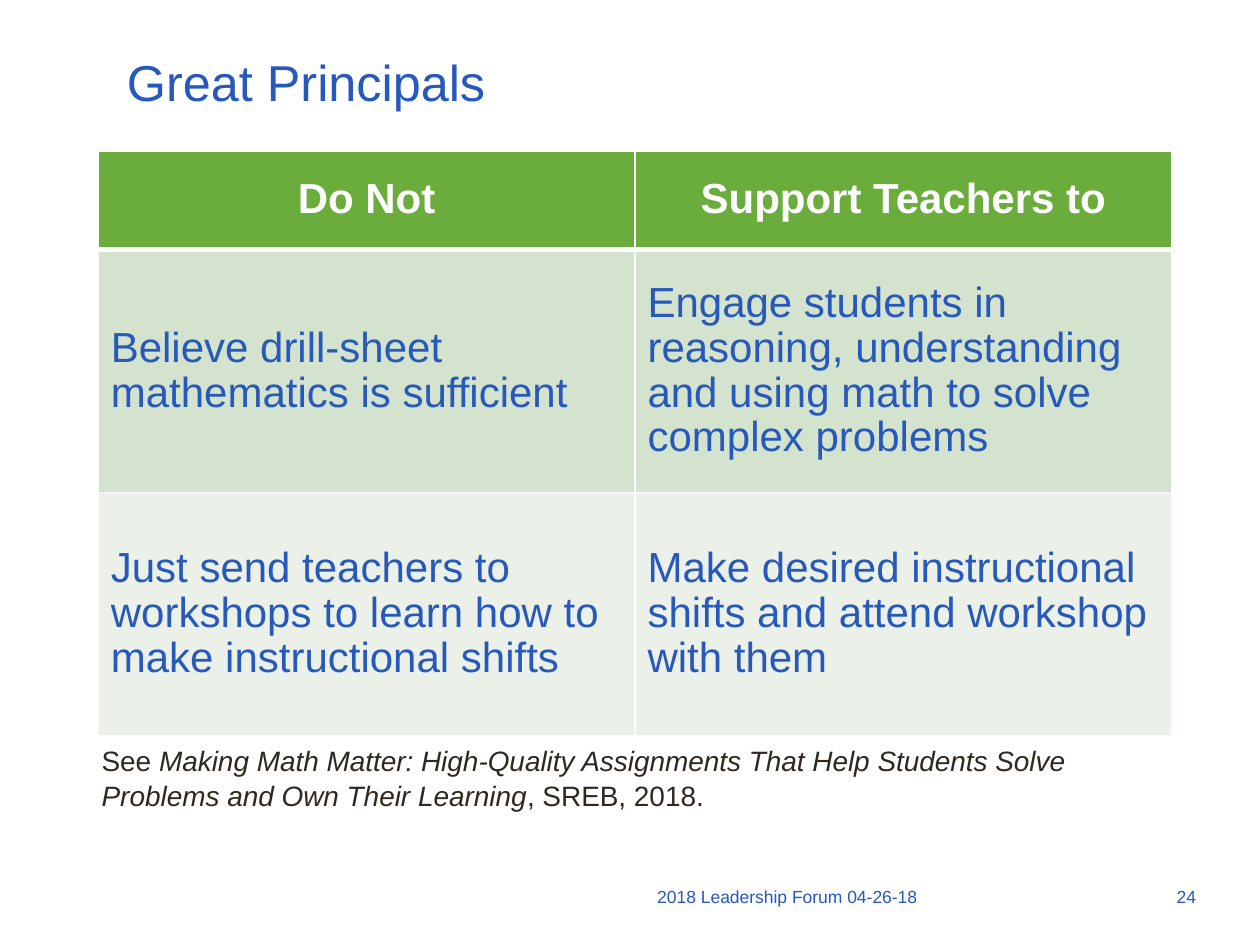
import pptx
import pptx.dml.color
import pptx.enum.text
import pptx.util
from dataclasses import dataclass
from lxml import etree
from pptx.dml.color import RGBColor
from pptx.enum.text import MSO_ANCHOR, PP_ALIGN
from pptx.oxml.ns import qn
from pptx.util import Cm

BLUE = RGBColor(0x27, 0x58, 0xBC)
INK = RGBColor(0x2E, 0x28, 0x20)
WHITE = RGBColor(0xFF, 0xFF, 0xFF)
GREEN = RGBColor(0x6A, 0xAD, 0x3C)
SAGE = RGBColor(0xD4, 0xE3, 0xCE)
MINT = RGBColor(0xEB, 0xF1, 0xE8)


@dataclass
class Box:
    left: float
    top: float
    width: float
    height: float
    runs: list[tuple[str, bool]]  # text, italic
    size: float
    color: RGBColor = BLUE
    anchor: MSO_ANCHOR = MSO_ANCHOR.TOP
    space: float = 1.0


@dataclass
class Row:
    height: float
    fill: RGBColor
    texts: tuple[str, str]
    head: bool = False


BOXES = [
    Box(2.31, 0.86, 21.36, 1.57, [("Great Principals", False)], 28.8,
        anchor=MSO_ANCHOR.MIDDLE),
    Box(13, 17.73, 10.49, 1.14, [("2018 Leadership Forum 04-26-18", False)], 10),
    Box(23.47, 17.73, 1.45, 1.14, [("24", False)], 10),
    Box(1.8, 14.83, 21.89, 1.63, [
        ("See ", False),
        ("Making Math Matter: High-Quality Assignments That Help Students "
         "Solve Problems and Own Their Learning", True),
        (", SREB, 2018.", False),
    ], 16, INK, space=1.05),
]

ROWS = [
    Row(1.98, GREEN, ("Do Not", "Support Teachers to"), head=True),
    Row(4.9, SAGE, (
        "Believe drill-sheet mathematics is sufficient",
        "Engage students in reasoning, understanding and using math to solve "
        "complex problems")),
    Row(4.9, MINT, (
        "Just send teachers to workshops to learn how to make instructional shifts",
        "Make desired instructional shifts and attend workshop with them")),
]


def write(para, text: str, *, size: float, color: RGBColor, bold: bool = False,
          italic: bool = False, align: PP_ALIGN = PP_ALIGN.LEFT,
          space: float = 1.0) -> None:
    """Add one formatted run to a paragraph."""
    para.alignment = align
    para.line_spacing = space
    run = para.add_run()
    run.text = text
    font = run.font
    font.name = "Arial"
    font.size = pptx.util.Pt(size)
    font.bold = bold
    font.italic = italic
    font.color.rgb = color


def draw_box(slide, box: Box) -> None:
    shape = slide.shapes.add_textbox(
        Cm(box.left), Cm(box.top), Cm(box.width), Cm(box.height))
    frame = shape.text_frame
    frame.word_wrap = True
    frame.vertical_anchor = box.anchor
    for text, italic in box.runs:
        write(frame.paragraphs[0], text, size=box.size, color=box.color,
              italic=italic, space=box.space)


def edge(cell, base: float) -> None:
    """Draw white cell borders; the bottom one has its own width."""
    props = cell._tc.get_or_add_tcPr()
    widths = {"a:lnL": 1, "a:lnR": 1, "a:lnT": 1, "a:lnB": base}
    for spot, (tag, width) in enumerate(widths.items()):
        line = etree.Element(qn(tag), w=str(pptx.util.Pt(width)))
        fill = etree.SubElement(line, qn("a:solidFill"))
        etree.SubElement(fill, qn("a:srgbClr"), val=str(WHITE))
        props.insert(spot, line)


def draw_table(slide, rows: list[Row]) -> None:
    wide = 10.82
    table = slide.shapes.add_table(
        len(rows), 2, Cm(1.98), Cm(3.05), Cm(2 * wide),
        Cm(sum(row.height for row in rows))).table
    for col in table.columns:
        col.width = Cm(wide)
    for r, row in enumerate(rows):
        table.rows[r].height = Cm(row.height)
        for c, text in enumerate(row.texts):
            cell = table.cell(r, c)
            cell.vertical_anchor = MSO_ANCHOR.MIDDLE
            cell.fill.solid()
            cell.fill.fore_color.rgb = row.fill
            edge(cell, 3 if row.head else 1)
            write(cell.text_frame.paragraphs[0], text, size=24, bold=row.head,
                  color=WHITE if row.head else BLUE, space=0.96,
                  align=PP_ALIGN.CENTER if row.head else PP_ALIGN.LEFT)


def main() -> None:
    deck = pptx.Presentation()
    deck.slide_width, deck.slide_height = Cm(25.4), Cm(19.05)
    slide = deck.slides.add_slide(deck.slide_layouts[6])

    # Comparison table
    draw_table(slide, ROWS)

    # Title, footer, page number and citation
    for box in BOXES:
        draw_box(slide, box)

    deck.save("out.pptx")


if __name__ == "__main__":
    main()
